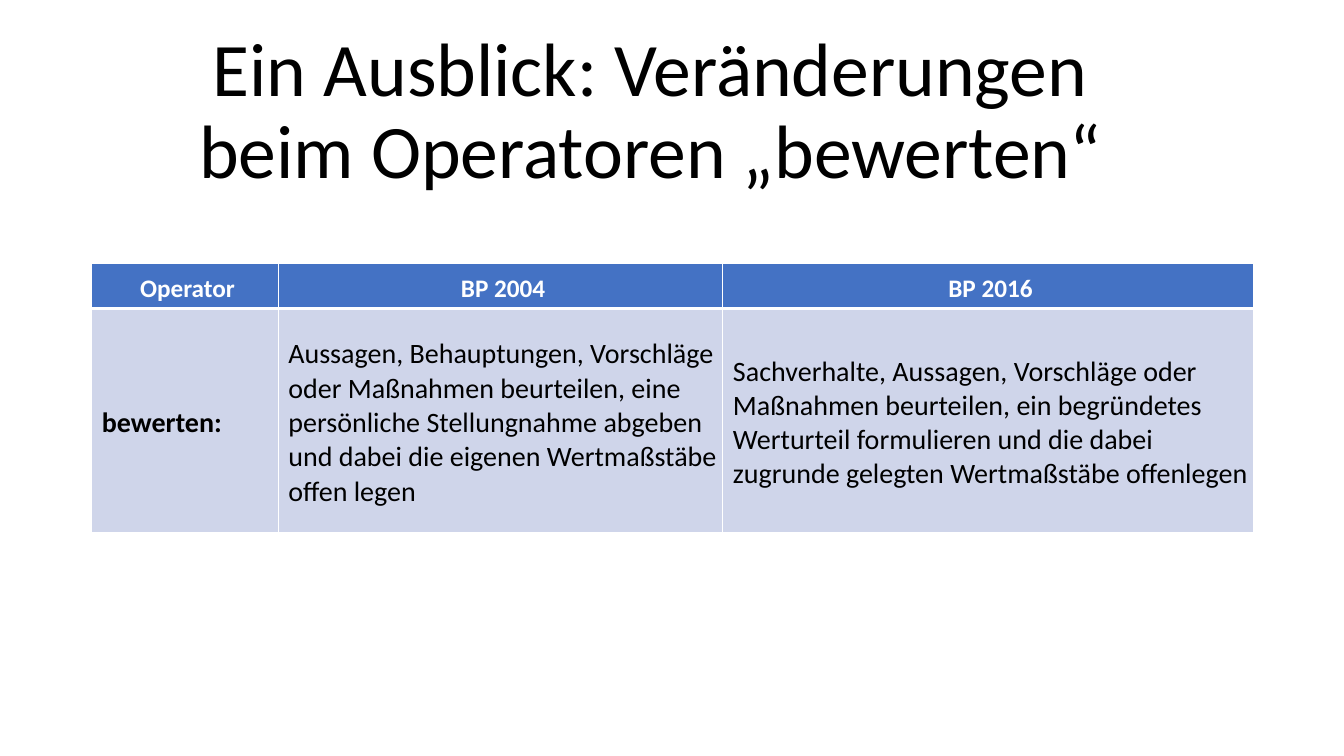
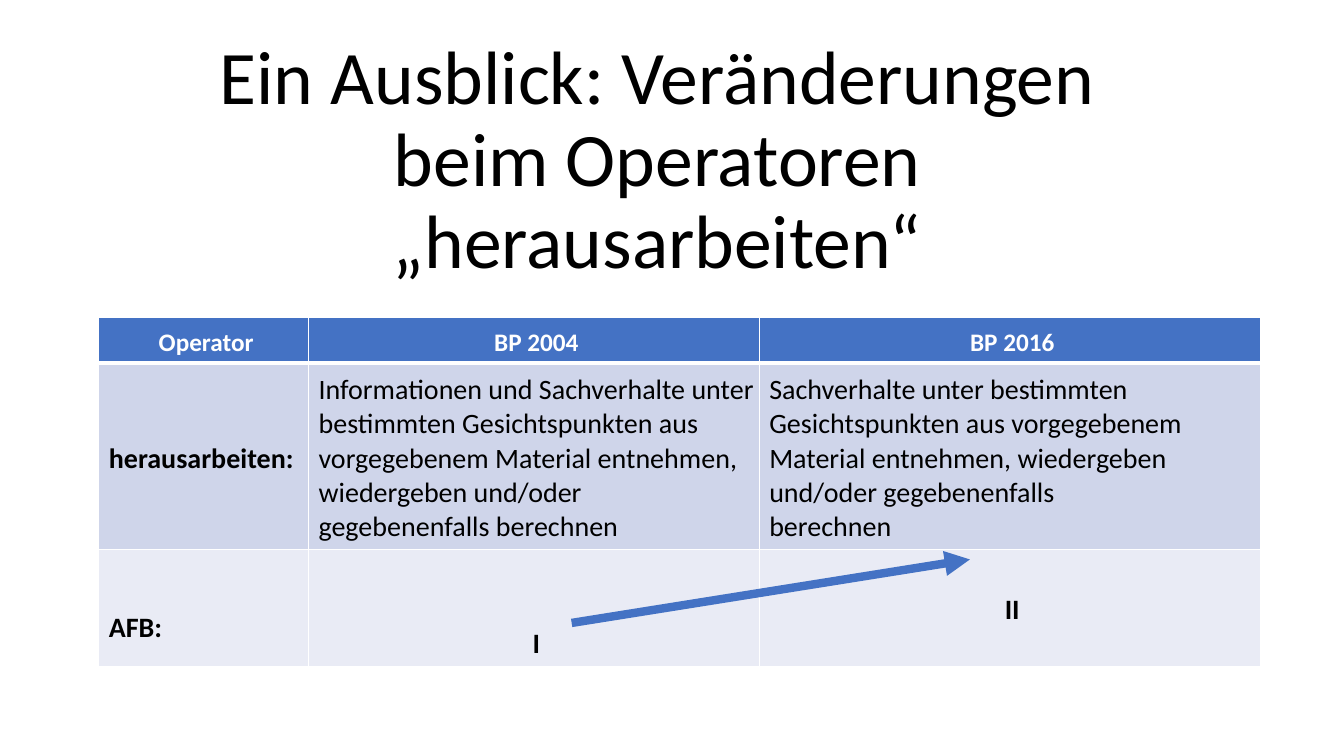
from dataclasses import dataclass

from lxml import etree
from pptx import Presentation
from pptx import util as u
from pptx.dml.color import RGBColor
from pptx.enum import shapes, text
from pptx.oxml import ns

PX = 9144
CENTER, LEFT = text.PP_ALIGN.CENTER, text.PP_ALIGN.LEFT


@dataclass(frozen=True)
class Theme:
    font: str = "Calibri"
    ink: str = "000000"
    paper: str = "FFFFFF"
    accent: str = "4472C4"
    bands: tuple = ("CFD5EA", "E9EBF5")
    title_size: int = 54
    header_size: int = 18
    body_size: int = 20
    line_spacing: float = 0.9
    grid: int = 1
    header_rule: int = 3
    arrow: int = 6


THEME = Theme()
HEADERS = ("Operator", "BP 2004", "BP 2016")


@dataclass(frozen=True)
class Entry:
    lines: tuple
    bold: bool = False
    align: text.PP_ALIGN = LEFT
    drop: int = 0


def px(*lengths):
    return [u.Emu(length * PX) for length in lengths]


def rgb(color):
    return RGBColor.from_string(color)


def add_run(paragraph, wording, size, color, bold=False):
    run = paragraph.add_run()
    run.text = wording
    run.font.name = THEME.font
    run.font.size = u.Pt(size)
    run.font.bold = bold
    run.font.color.rgb = rgb(color)


def add_title(slide, wording, *box):
    frame = slide.shapes.add_textbox(*px(*box)).text_frame
    frame.word_wrap = True
    frame.vertical_anchor = text.MSO_ANCHOR.BOTTOM
    heading = frame.paragraphs[0]
    heading.alignment = CENTER
    heading.line_spacing = THEME.line_spacing
    add_run(heading, wording, THEME.title_size, THEME.ink)


def add_borders(cell, top, bottom):
    widths = {"L": THEME.grid, "R": THEME.grid, "T": top, "B": bottom}
    properties = cell._tc.get_or_add_tcPr()
    for side, width in widths.items():
        border = etree.SubElement(properties, ns.qn(f"a:ln{side}"), w=str(u.Pt(width)))
        fill = etree.SubElement(border, ns.qn("a:solidFill"))
        etree.SubElement(fill, ns.qn("a:srgbClr"), val=THEME.paper)


def fill_cell(cell, entry, size, ink, fill, top, bottom):
    add_borders(cell, top, bottom)
    cell.fill.solid()
    cell.fill.fore_color.rgb = rgb(fill)
    cell.vertical_anchor = text.MSO_ANCHOR.MIDDLE
    cell.margin_left, cell.margin_top, cell.margin_right, cell.margin_bottom = px(
        10, 10 + entry.drop, 5, 5)
    frame = cell.text_frame
    for index, line in enumerate(entry.lines):
        paragraph = frame.add_paragraph() if index else frame.paragraphs[0]
        paragraph.alignment = entry.align
        add_run(paragraph, line, size, ink, entry.bold)


def add_comparison(slide, left, top, widths, heights, body):
    frame = slide.shapes.add_table(
        len(heights), len(widths), *px(left, top, sum(widths), sum(heights)))
    comparison = frame.table
    comparison.horz_banding = False
    for column, width in zip(comparison.columns, px(*widths)):
        column.width = width
    for row, height in zip(comparison.rows, px(*heights)):
        row.height = height
    for column, label in enumerate(HEADERS):
        fill_cell(comparison.cell(0, column), Entry((label,), True, CENTER),
                  THEME.header_size, THEME.paper, THEME.accent,
                  THEME.grid, THEME.header_rule)
    for row, entries in enumerate(body, 1):
        above = THEME.header_rule if row == 1 else THEME.grid
        for column, entry in enumerate(entries):
            fill_cell(comparison.cell(row, column), entry,
                      THEME.body_size, THEME.ink, THEME.bands[row - 1],
                      above, THEME.grid)


def add_arrow(slide, *ends):
    arrow = slide.shapes.add_connector(shapes.MSO_CONNECTOR.STRAIGHT, *px(*ends))
    arrow.line.color.rgb = rgb(THEME.accent)
    arrow.line.width = u.Pt(THEME.arrow)
    etree.SubElement(arrow.line._get_or_add_ln(), ns.qn("a:tailEnd"), type="triangle")
    etree.SubElement(arrow._element.spPr, ns.qn("a:effectLst"))


def build_bewerten(slide):
    add_title(slide, "Ein Ausblick: Veränderungen beim Operatoren „bewerten“",
              170, 21, 950, 177)
    add_comparison(slide, 91, 261, (185, 441, 526), (45, 222), [(
        Entry(("bewerten:",), True),
        Entry(("Aussagen, Behauptungen, Vorschläge oder Maßnahmen beurteilen, "
               "eine persönliche Stellungnahme abgeben und dabei die eigenen "
               "Wertmaßstäbe offen legen",)),
        Entry(("Sachverhalte, Aussagen, Vorschläge oder Maßnahmen beurteilen, "
               "ein begründetes Werturteil formulieren und die dabei zugrunde "
               "gelegten Wertmaßstäbe offenlegen",)),
    )])


def build_herausarbeiten(slide):
    add_title(slide, "Ein Ausblick: Veränderungen beim Operatoren „herausarbeiten“",
              177, 35, 950, 252)
    add_comparison(slide, 98, 315, (208, 447, 497), (45, 185, 116), [(
        Entry(("herausarbeiten:",), True),
        Entry(("Informationen und Sachverhalte unter bestimmten Gesichtspunkten "
               "aus vorgegebenem Material entnehmen, wiedergeben und/oder "
               "gegebenenfalls berechnen",)),
        Entry(("Sachverhalte unter bestimmten Gesichtspunkten aus vorgegebenem",
               "Material entnehmen, wiedergeben und/oder gegebenenfalls",
               "berechnen")),
    ), (
        Entry(("AFB:",), True, drop=34),
        Entry(("I",), True, CENTER, drop=67),
        Entry(("II",), True, CENTER),
    )])
    add_arrow(slide, 567, 618, 962, 555)


def main():
    deck = Presentation()
    deck.slide_width, deck.slide_height = px(1333, 750)
    blank = deck.slide_layouts[6]
    for build in (build_bewerten, build_herausarbeiten):
        build(deck.slides.add_slide(blank))
    deck.save("out.pptx")


if __name__ == "__main__":
    main()
